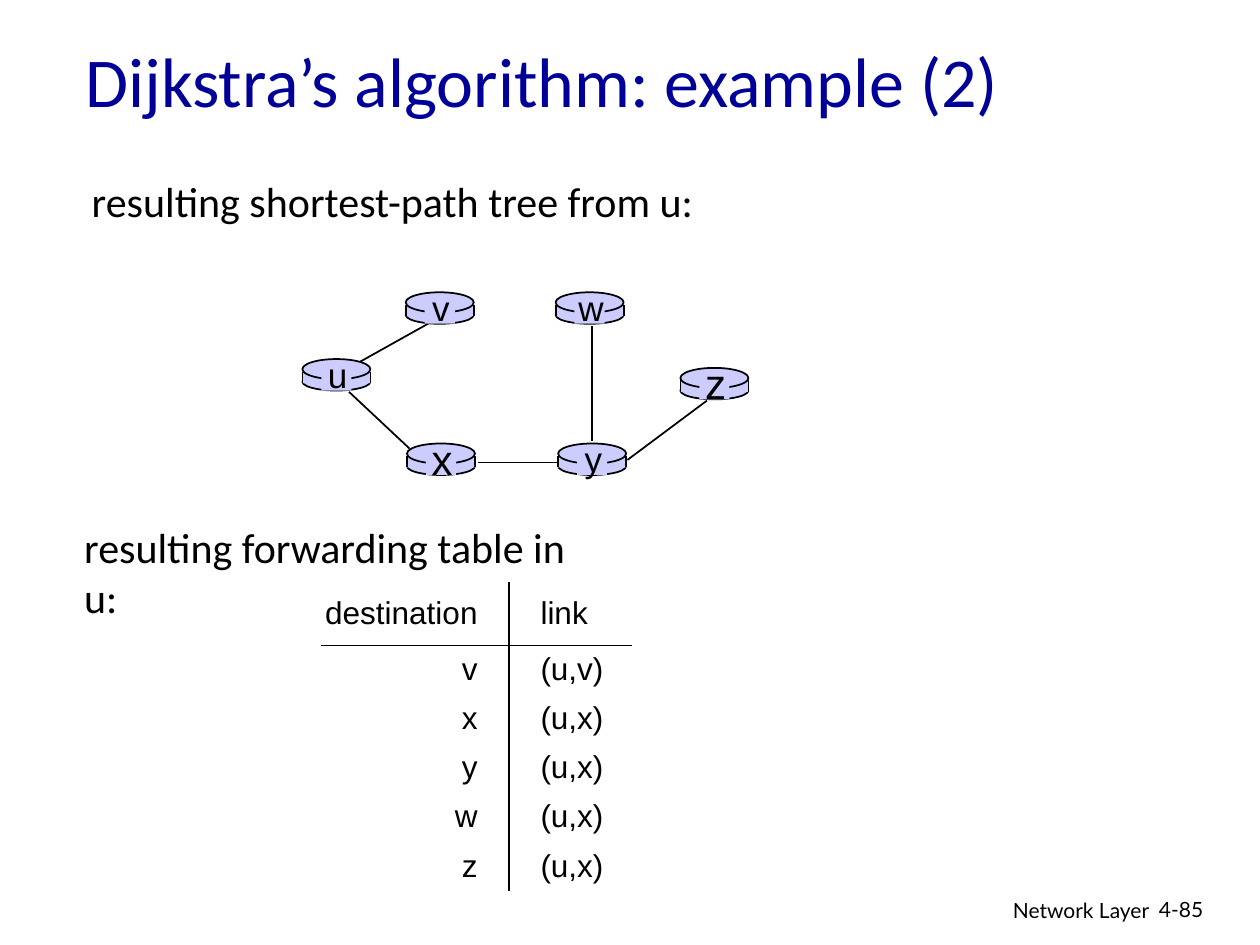
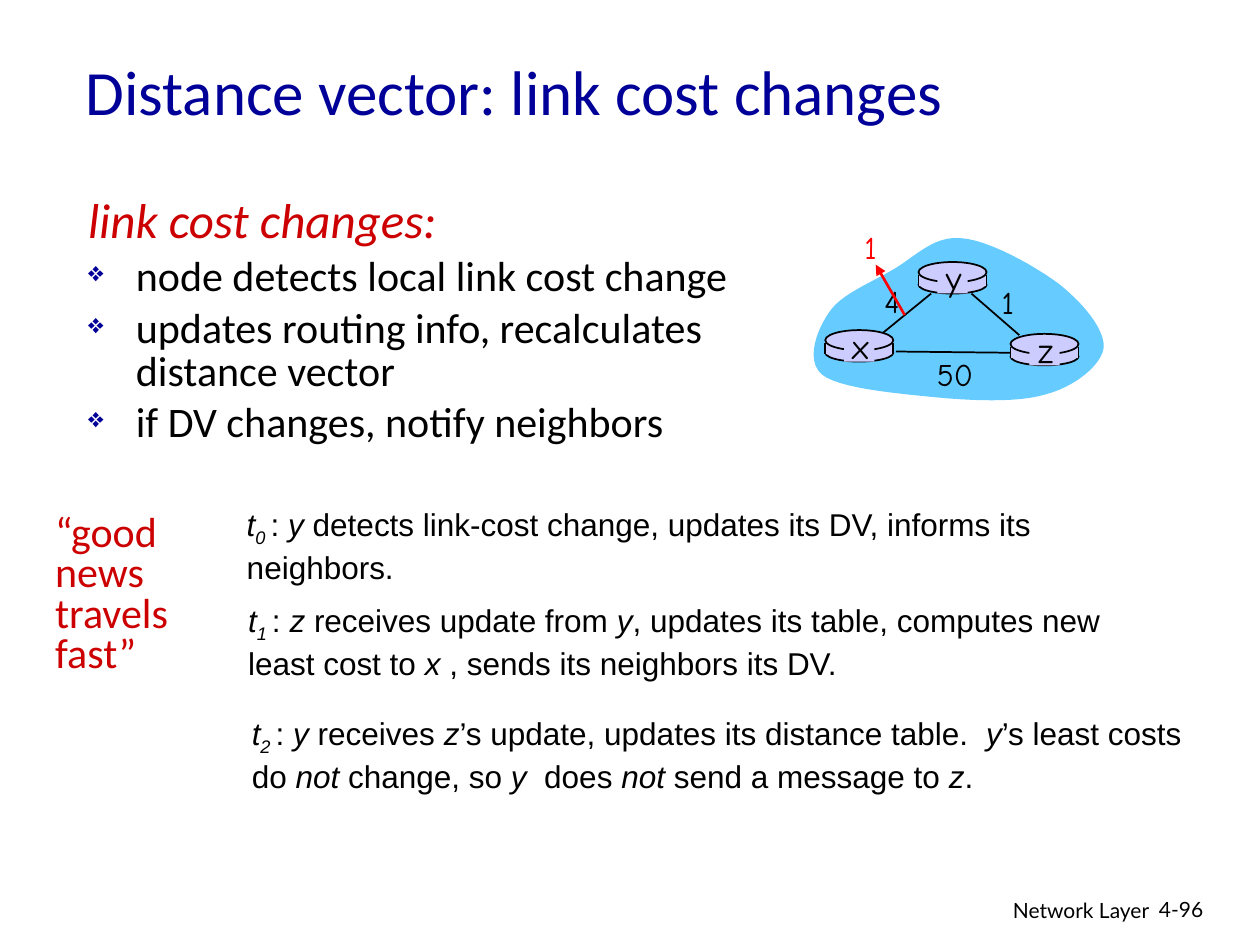
from lxml.etree import SubElement
from pptx import Presentation
from pptx.dml.color import RGBColor
from pptx.enum.shapes import MSO_CONNECTOR, MSO_SHAPE
from pptx.enum.text import MSO_ANCHOR, PP_ALIGN
from pptx.oxml.ns import qn
from pptx.util import Inches, Pt

WIDTH, HEIGHT = 10, 7.5
BLACK, NAVY, CRIMSON, RED = "000000", "000099", "CC0000", "FF0000"
ROUTER_FILL, CLOUD_FILL = "CCCCFF", "66CCFF"
HEADING, DIAGRAM, SKETCH, FOOTER = "Calibri", "Arial", "Comic Neue", "Lato"
ROUTER_WIDTH = 0.54

TREE_ROUTERS = [
    ("u", 2.4, 2.85, 20), ("v", 3.22, 2.32, 20), ("w", 4.41, 2.32, 20),
    ("x", 3.23, 3.52, 24), ("y", 4.43, 3.52, 20), ("z", 5.4, 2.92, 24),
]
TREE_LINKS = [
    (2.86, 2.87, 3.45, 2.54), (4.7, 2.59, 4.7, 3.5), (4.98, 3.65, 5.61, 3.18),
    (3.79, 3.67, 4.43, 3.67), (2.77, 3.11, 3.25, 3.56),
]
FORWARDING = [
    ("destination", "link"), ("v", "(u,v)"), ("x", "(u,x)"),
    ("y", "(u,x)"), ("w", "(u,x)"), ("z", "(u,x)"),
]
TABLE_LEFT, TABLE_TOP = 2.55, 4.62
TABLE_COLUMNS = (1.49, 0.98)
HEADER_ROW, BODY_ROW = 0.5, 0.39

CHANGE_HEADING = "link cost changes:"
CHANGE_STEPS = [
    "node detects local link cost change",
    "updates routing info, recalculates \ndistance vector",
    "if DV changes, notify neighbors",
]
SLOGAN = ["“good", "news", "travels", "fast”"]
TIMELINE = [
    (1.86, 3.96, 7.32, "*y* detects link-cost change, updates its DV, informs its neighbors."),
    (1.87, 4.72, 7.11, "*z* receives update from *y*, updates its table, computes new "
                       "least cost to *x* , sends its neighbors its DV."),
    (1.9, 5.62, 7.83, "*y* receives *z*’s update, updates its distance table.  *y*’s least costs "
                      "do *not* change, so *y*  does *not* send a message to *z*."),
]
COST_ROUTERS = [("x", 6.55, 2.62, 20), ("z", 8.02, 2.65, 20), ("y", 7.29, 2.08, 20)]
COST_LINKS = [(7.01, 2.64, 7.39, 2.33), (7.71, 2.33, 8.09, 2.66), (7.11, 2.79, 8.05, 2.8)]
COSTS = [("1", 8.0, 2.4, BLACK), ("4", 7.08, 2.39, BLACK),
         ("50", 7.58, 2.97, BLACK), ("1", 6.91, 1.96, RED)]
CLOUD_START = (6.58, 2.48)
CLOUD_CURVES = [
    ((6.67, 2.34), (6.9, 2.25), (7.07, 2.15)), ((7.24, 2.06), (7.4, 1.87), (7.62, 1.89)),
    ((7.84, 1.9), (8.21, 2.11), (8.4, 2.25)), ((8.59, 2.4), (8.77, 2.61), (8.76, 2.76)),
    ((8.74, 2.9), (8.53, 3.07), (8.3, 3.13)), ((8.07, 3.2), (7.69, 3.18), (7.39, 3.15)),
    ((7.09, 3.12), (6.65, 3.08), (6.52, 2.97)), ((6.39, 2.85), (6.49, 2.61), CLOUD_START),
]


def color(value):
    return RGBColor.from_string(value)


def inches(*values):
    return [Inches(value) for value in values]


def format_run(run, size, font, ink=BLACK, italic=False):
    run.font.size = Pt(size)
    run.font.name = font
    run.font.italic = italic
    run.font.color.rgb = color(ink)


def add_text(slide, box, lines, size, font, ink=BLACK, align=PP_ALIGN.LEFT,
             anchor=MSO_ANCHOR.TOP, wrap=True):
    text_frame = slide.shapes.add_textbox(*inches(*box)).text_frame
    text_frame.text = lines
    text_frame.word_wrap = wrap
    text_frame.vertical_anchor = anchor
    for paragraph in text_frame.paragraphs:
        paragraph.alignment = align
        for run in paragraph.runs:
            format_run(run, size, font, ink)
    return text_frame


def add_label(slide, text, center_x, center_y, size, font, ink=BLACK):
    add_text(slide, (center_x - 0.25, center_y - 0.25, 0.5, 0.5), text, size, font, ink,
             PP_ALIGN.CENTER, MSO_ANCHOR.MIDDLE, wrap=False)


def add_line(slide, ends, ink=BLACK, width=1, arrow=False):
    line = slide.shapes.add_connector(MSO_CONNECTOR.STRAIGHT, *inches(*ends))
    line.line.color.rgb = color(ink)
    line.line.width = Pt(width)
    if arrow:
        SubElement(line.line._get_or_add_ln(), qn("a:tailEnd"), type="triangle")
    SubElement(line._element.spPr, qn("a:effectLst"))


def paint(shape, fill, outlined=False):
    shape.shadow.inherit = False
    shape.fill.solid()
    shape.fill.fore_color.rgb = color(fill)
    if outlined:
        shape.line.color.rgb = color(BLACK)
        shape.line.width = Pt(1)
    else:
        shape.line.fill.background()


def add_router(slide, name, left, top, size, font):
    def part(kind, x, y, width, height, outlined=False):
        shape = slide.shapes.add_shape(kind, *inches(left + x, top + y, width, height))
        paint(shape, ROUTER_FILL, outlined)

    part(MSO_SHAPE.OVAL, 0, 0.11, ROUTER_WIDTH, 0.14, True)
    part(MSO_SHAPE.RECTANGLE, 0, 0.1, ROUTER_WIDTH, 0.09)
    for side in (left, left + ROUTER_WIDTH):
        add_line(slide, (side, top + 0.1, side, top + 0.19))
    part(MSO_SHAPE.OVAL, 0, 0, ROUTER_WIDTH, 0.16, True)
    part(MSO_SHAPE.RECTANGLE, 0.15, 0.02, 0.24, 0.23)
    add_label(slide, name, left + ROUTER_WIDTH / 2 + 0.01, top + 0.12, size, font)


def add_network(slide, links, routers, font):
    for link in links:
        add_line(slide, link)
    for router in routers:
        add_router(slide, *router, font)


def add_cloud(slide, steps=12):
    points, start = [], CLOUD_START
    for first, second, end in CLOUD_CURVES:
        for step in range(1, steps + 1):
            t = step / steps
            points.append(tuple(
                Inches((1 - t) ** 3 * a + 3 * (1 - t) ** 2 * t * b + 3 * (1 - t) * t ** 2 * c + t ** 3 * d)
                for a, b, c, d in zip(start, first, second, end)))
        start = end
    builder = slide.shapes.build_freeform(*inches(*CLOUD_START))
    builder.add_line_segments(points, close=True)
    paint(builder.convert_to_shape(), CLOUD_FILL)


def add_border(cell, side):
    properties = cell._tc.get_or_add_tcPr()
    border = SubElement(properties, qn(f"a:ln{side}"), w=str(Pt(0.75)))
    SubElement(SubElement(border, qn("a:solidFill")), qn("a:srgbClr"), val=BLACK)


def add_forwarding_table(slide):
    heights = [HEADER_ROW] + [BODY_ROW] * (len(FORWARDING) - 1)
    frame = slide.shapes.add_table(len(FORWARDING), 2, *inches(
        TABLE_LEFT, TABLE_TOP, sum(TABLE_COLUMNS), sum(heights)))
    table = frame.table
    table.first_row = table.horz_banding = False
    table._tbl.tblPr.find(qn("a:tableStyleId")).text = "{2D5ABB26-0587-4C30-8999-92F81FD0307C}"
    for column, width in zip(table.columns, TABLE_COLUMNS):
        column.width = Inches(width)
    for row, (values, height) in enumerate(zip(FORWARDING, heights)):
        table.rows[row].height = Inches(height)
        for column, value in enumerate(values):
            cell = table.cell(row, column)
            cell.text = value
            cell.vertical_anchor = MSO_ANCHOR.MIDDLE
            cell.margin_top = cell.margin_bottom = 0
            cell.margin_left, cell.margin_right = inches(*((0, 0.25), (0.25, 0))[column])
            paragraph = cell.text_frame.paragraphs[0]
            paragraph.alignment = (PP_ALIGN.RIGHT, PP_ALIGN.LEFT)[column]
            format_run(paragraph.runs[0], 18, DIAGRAM)
            if column == 0:
                add_border(cell, "R")
            if row == 0:
                add_border(cell, "B")
            cell.fill.background()


def add_change_list(slide):
    text_frame = add_text(slide, (0.6, 1.53, 5.32, 2.76), CHANGE_HEADING, 28, HEADING, CRIMSON)
    heading = text_frame.paragraphs[0]
    heading.runs[0].font.italic = True
    for step in CHANGE_STEPS:
        paragraph = text_frame.add_paragraph()
        paragraph.text = step
        for run in paragraph.runs:
            format_run(run, 24, HEADING)
    for paragraph in text_frame.paragraphs:
        paragraph.line_spacing = 0.85
        paragraph.space_before = Pt(5)
        properties = paragraph._p.get_or_add_pPr()
        properties.set("marL", str(Inches(0.38)))
        properties.set("indent", str(-Inches(0.38)))
        if paragraph.text != CHANGE_HEADING:
            SubElement(SubElement(properties, qn("a:buClr")), qn("a:srgbClr"), val=NAVY)
            SubElement(properties, qn("a:buSzPct"), val="65000")
            SubElement(properties, qn("a:buChar"), char="❖")


def add_event(slide, moment, left, top, width, text):
    text_frame = add_text(slide, (left, top, width, 1), "", 18, DIAGRAM)
    paragraph = text_frame.paragraphs[0]
    pieces = f"*t**{moment} *: {text}".split("*")
    for index, piece in enumerate(pieces):
        if piece:
            run = paragraph.add_run()
            run.text = piece
            format_run(run, 18, DIAGRAM, italic=index % 2 == 1)
            if index == 3:
                run._r.get_or_add_rPr().set("baseline", "-25000")


def start_slide(presentation, title, size, title_height, number):
    slide = presentation.slides.add_slide(presentation.slide_layouts[6])
    add_text(slide, (6.05, 7.07, 3.17, 0.31), "Network Layer", 12, FOOTER, align=PP_ALIGN.RIGHT)
    add_text(slide, (9.1, 7.07, 0.74, 0.3), number, 12, FOOTER)
    add_text(slide, (0.58, 0.17, 8.5, title_height), title, size, HEADING, NAVY,
             anchor=MSO_ANCHOR.MIDDLE)
    return slide


def build_tree_slide(presentation):
    slide = start_slide(presentation, "Dijkstra’s algorithm: example (2)", 40, 0.93, "4-85")
    add_network(slide, TREE_LINKS, TREE_ROUTERS, DIAGRAM)
    add_text(slide, (0.63, 1.34, 5, 0.5), "resulting shortest-path tree from u:", 24, HEADING,
             wrap=False)
    add_forwarding_table(slide)
    add_text(slide, (0.57, 4.09, 4.2, 0.5), "resulting forwarding table in u:", 24, HEADING)


def build_cost_slide(presentation):
    slide = start_slide(presentation, "Distance vector: link cost changes", 36, 1.1, "4-96")
    add_change_list(slide)
    slogan = add_text(slide, (0.34, 4.04, 1.4, 1.38), "\n".join(SLOGAN), 24, HEADING, CRIMSON)
    for paragraph in slogan.paragraphs:
        paragraph.line_spacing = 0.8
    add_cloud(slide)
    add_network(slide, COST_LINKS, COST_ROUTERS, SKETCH)
    for cost, center_x, center_y, ink in COSTS:
        add_label(slide, cost, center_x, center_y, 18, SKETCH, ink)
    add_line(slide, (7.18, 2.5, 6.95, 2.1), RED, 1.5, arrow=True)
    for moment, event in enumerate(TIMELINE):
        add_event(slide, moment, *event)


def main():
    presentation = Presentation()
    presentation.slide_width, presentation.slide_height = inches(WIDTH, HEIGHT)
    build_tree_slide(presentation)
    build_cost_slide(presentation)
    presentation.save("out.pptx")


if __name__ == "__main__":
    main()
